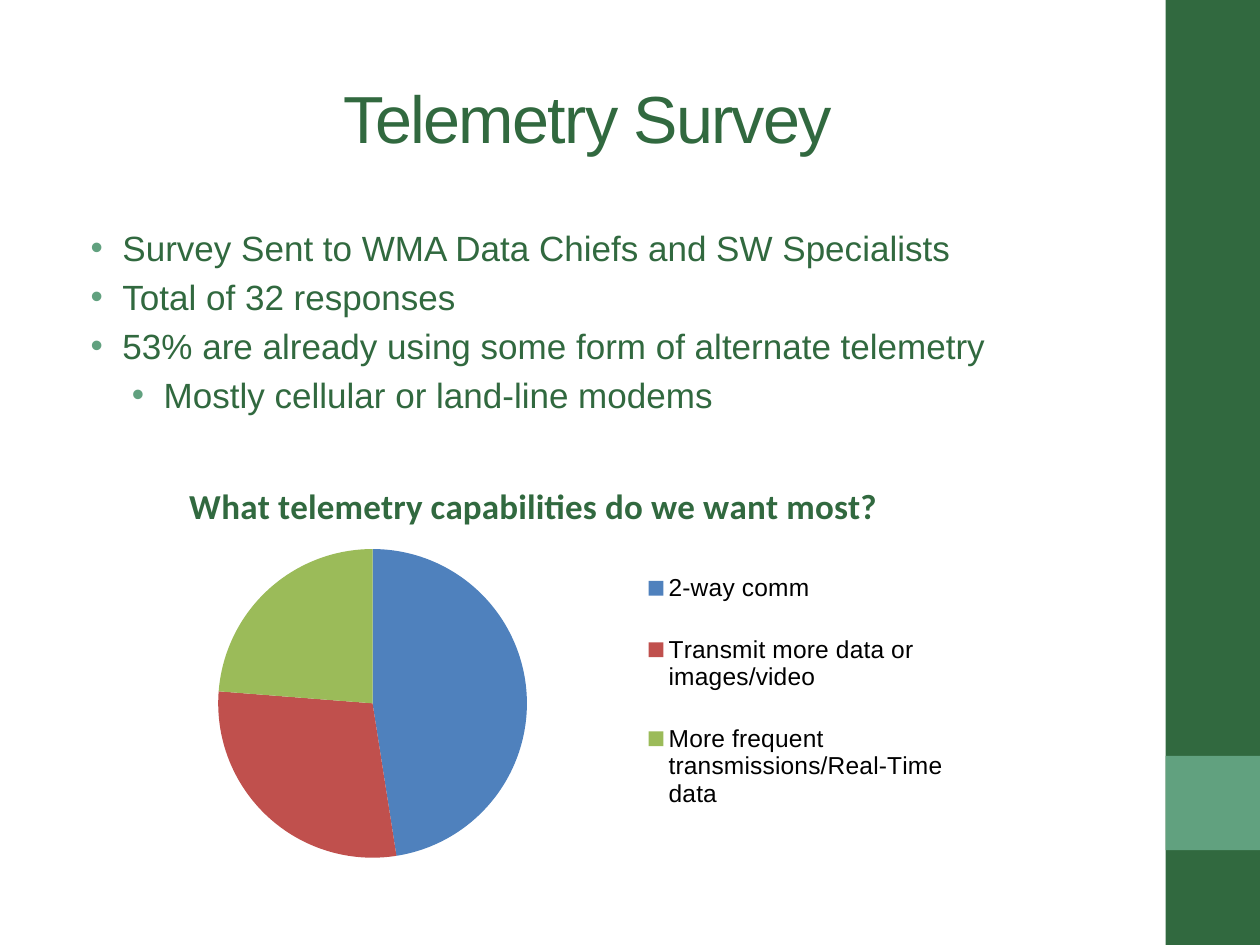
from lxml import etree
from pptx import Presentation
from pptx.chart.data import CategoryChartData
from pptx.dml.color import RGBColor
from pptx.enum.chart import XL_CHART_TYPE, XL_LEGEND_POSITION
from pptx.enum.shapes import MSO_SHAPE
from pptx.enum.text import MSO_ANCHOR, PP_ALIGN
from pptx.oxml.ns import qn
from pptx.util import Cm, Pt

PIE = XL_CHART_TYPE.PIE
RIGHT = XL_LEGEND_POSITION.RIGHT
RECT = MSO_SHAPE.RECTANGLE
MIDDLE = MSO_ANCHOR.MIDDLE
CENTER = PP_ALIGN.CENTER

COLORS = {
    "dark": "31693F",
    "light": "61A17F",
    "black": "000000",
    "blue": "4F81BD",
    "red": "C0504D",
    "lime": "9BBB59",
}
WIDTH, HEIGHT = 25.4, 19.05
BAND = 1.9

POINTS = [
    ("Survey Sent to WMA Data Chiefs and SW Specialists", 0),
    ("Total of 32 responses", 0),
    ("53% are already using some form of alternate telemetry", 0),
    ("Mostly cellular or land-line modems", 1),
]
WANTS = [
    ("2-way comm", 48, "blue"),
    ("Transmit more data or images/video", 29, "red"),
    ("More frequent transmissions/Real-Time data", 24, "lime"),
]


def color(name):
    return RGBColor.from_string(COLORS[name])


def place(node, index, **sizes):
    """Give a chart part a manual layout, in fractions of the chart."""
    for old in node.findall(qn("c:layout")):
        node.remove(old)
    layout = etree.Element(qn("c:layout"))
    manual = etree.SubElement(layout, qn("c:manualLayout"))
    if node.tag == qn("c:plotArea"):
        etree.SubElement(manual, qn("c:layoutTarget")).set("val", "inner")
    for key in ("xMode", "yMode"):
        etree.SubElement(manual, qn("c:" + key)).set("val", "edge")
    for key, size in sizes.items():
        etree.SubElement(manual, qn("c:" + key)).set("val", str(size))
    node.insert(index, layout)


class Deck:
    def __init__(self, face="Arial"):
        self.face = face
        self.show = Presentation()
        self.show.slide_width, self.show.slide_height = Cm(WIDTH), Cm(HEIGHT)
        self.slide = self.show.slides.add_slide(self.show.slide_layouts[6])

    def style(self, font, size, tone="dark", face=None):
        font.name, font.size = face or self.face, Pt(size)
        font.color.rgb = color(tone)

    def block(self, box, tone):
        shape = self.slide.shapes.add_shape(RECT, *map(Cm, box))
        shape.shadow.inherit = False
        shape.fill.solid()
        shape.fill.fore_color.rgb = color(tone)
        shape.line.fill.background()

    def frame(self, box):
        frame = self.slide.shapes.add_textbox(*map(Cm, box)).text_frame
        frame.word_wrap = True
        return frame

    def title(self, box, text):
        frame = self.frame(box)
        frame.vertical_anchor = MIDDLE
        para = frame.paragraphs[0]
        para.text, para.alignment = text, CENTER
        self.style(para.font, 38)
        para.font._element.set("spc", "-100")

    def bullets(self, box, items):
        frame = self.frame(box)
        for i, (text, level) in enumerate(items):
            para = frame.add_paragraph() if i else frame.paragraphs[0]
            para.text, para.level = text, level
            para.space_before = Pt(4 if i else 0)
            props = para._p.get_or_add_pPr()
            props.set("marL", str(Cm(0.95 + 0.83 * level)))
            props.set("indent", str(Cm(-0.64)))
            tint = etree.SubElement(props, qn("a:buClr"))
            etree.SubElement(tint, qn("a:srgbClr")).set("val", COLORS["light"])
            etree.SubElement(props, qn("a:buFont")).set("typeface", "Arial")
            etree.SubElement(props, qn("a:buChar")).set("char", "•")
            self.style(para.font, 20)

    def pie(self, box, title, parts):
        data = CategoryChartData()
        data.categories = [name for name, _, _ in parts]
        for name in ("Series 1", "Series 2"):
            data.add_series(name, [value for _, value, _ in parts])
        chart = self.slide.shapes.add_chart(PIE, *map(Cm, box), data).chart
        # A new pie holds only the first series; this adds the second.
        chart.replace_data(data)
        self.style(chart.font, 10, "black", "Calibri")

        chart.has_title = True
        para = chart.chart_title.text_frame.paragraphs[0]
        para.text = title
        self.style(para.font, 20, face="Calibri")
        para.font.bold = True

        chart.has_legend = True
        chart.legend.position = RIGHT
        chart.legend.include_in_layout = False
        self.style(chart.legend.font, 14, "black")

        plot = chart.plots[0]
        plot.vary_by_categories = True
        for series in plot.series:
            for i, (_, _, tone) in enumerate(parts):
                fill = series.points[i].format.fill
                fill.solid()
                fill.fore_color.rgb = color(tone)

        root = chart._chartSpace
        place(root.find(".//" + qn("c:plotArea")), 0,
              x=0.14, y=0.21, w=0.35, h=0.75)
        place(chart.chart_title._element, 1, x=0.1, y=0.03)
        place(chart.legend._element, 1, x=0.61, y=0.19, w=0.37, h=0.73)


def main():
    deck = Deck()
    edge = WIDTH - BAND
    deck.block((edge, 0, BAND, HEIGHT), "dark")
    deck.block((edge, 15.24, BAND, BAND), "light")
    deck.title((1.27, 0.76, 21.16, 3.18), "Telemetry Survey")
    deck.bullets((1.27, 4.44, 21.16, 13.34), POINTS)
    deck.pie((1.91, 9.32, 17.78, 8.31),
             "What telemetry capabilities do we want most?", WANTS)
    deck.show.save("out.pptx")


if __name__ == "__main__":
    main()
